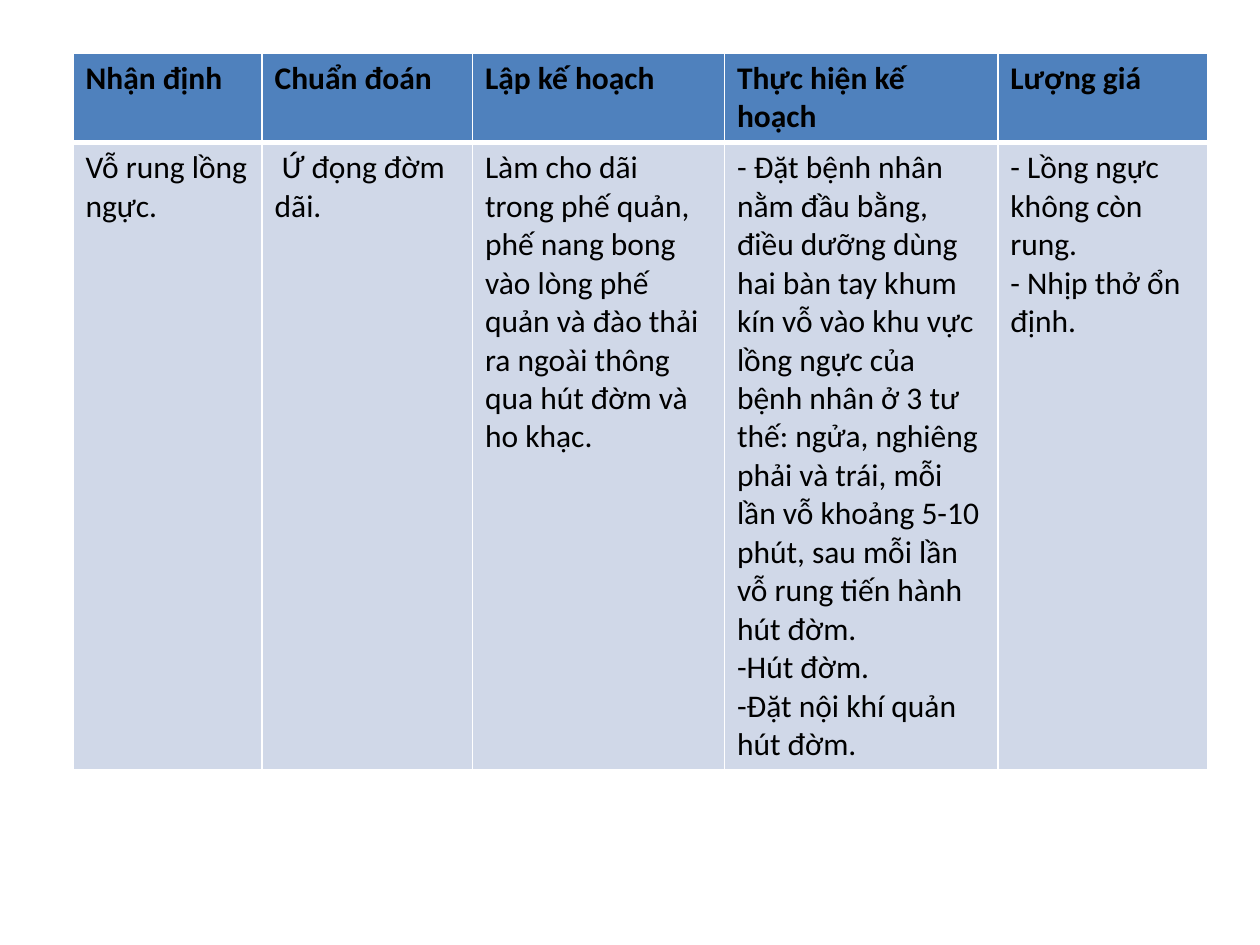
import pptx
import pptx.dml.color
import pptx.oxml
import pptx.oxml.ns
import pptx.util

HEADER_FILL, BODY_FILL, BORDER, TEXT = "4F81BD", "D0D8E8", "FFFFFF", "000000"
THIN, THICK = 1, 3
COLUMN_WIDTHS = [1.5, 1.67, 2, 2.17, 1.67]
ROW_HEIGHTS = [0.67, 4.12]
HEADINGS = ["Nhận định", "Chuẩn đoán", "Lập kế hoạch", "Thực hiện kế hoạch", "Lượng giá"]
CARE_PLAN = [
    "Vỗ rung lồng ngực.",
    " Ứ đọng đờm dãi.",
    "Làm cho dãi trong phế quản, phế nang bong vào lòng phế quản và đào thải "
    "ra ngoài thông qua hút đờm và ho khạc.",
    "- Đặt bệnh nhân nằm đầu bằng, điều dưỡng dùng hai bàn tay khum kín vỗ vào "
    "khu vực lồng ngực của bệnh nhân ở 3 tư thế: ngửa, nghiêng phải và trái, "
    "mỗi lần vỗ khoảng 5-10 phút, sau mỗi lần vỗ rung tiến hành hút đờm.\n"
    "-Hút đờm.\n"
    "-Đặt nội khí quản hút đờm.",
    "- Lồng ngực không còn rung.\n- Nhịp thở ổn định.",
]


def color(value):
    return pptx.dml.color.RGBColor.from_string(value)


def set_borders(cell, widths):
    """Draw the cell's borders; widths maps L, R, T, B, in that order, to points."""
    properties = cell._tc.get_or_add_tcPr()
    for side, width in widths.items():
        properties.append(pptx.oxml.parse_xml(
            f'<a:ln{side} {pptx.oxml.ns.nsdecls("a")} w="{pptx.util.Pt(width)}">'
            f'<a:solidFill><a:srgbClr val="{BORDER}"/></a:solidFill></a:ln{side}>'))


def fill_cell(cell, text, is_header):
    cell.text = text
    font_format = {"name": "Calibri", "size": pptx.util.Pt(18), "bold": is_header}
    for paragraph in cell.text_frame.paragraphs:
        for run in paragraph.runs:
            for name, value in font_format.items():
                setattr(run.font, name, value)
            run.font.color.rgb = color(TEXT)
    top, bottom = (THIN, THICK) if is_header else (THICK, THIN)
    set_borders(cell, {"L": THIN, "R": THIN, "T": top, "B": bottom})
    cell.fill.solid()
    cell.fill.fore_color.rgb = color(HEADER_FILL if is_header else BODY_FILL)


def add_care_table(slide, rows):
    left, top, width, height = map(
        pptx.util.Inches, (0.58, 0.42, sum(COLUMN_WIDTHS), sum(ROW_HEIGHTS)))
    table = slide.shapes.add_table(
        len(rows), len(COLUMN_WIDTHS), left, top, width, height).table
    for column, column_width in zip(table.columns, COLUMN_WIDTHS):
        column.width = pptx.util.Inches(column_width)
    for row_index, (row, row_height) in enumerate(zip(table.rows, ROW_HEIGHTS)):
        row.height = pptx.util.Inches(row_height)
        for cell, text in zip(row.cells, rows[row_index]):
            fill_cell(cell, text, is_header=row_index == 0)


def main():
    presentation = pptx.Presentation()
    presentation.slide_width = pptx.util.Inches(10)
    presentation.slide_height = pptx.util.Inches(7.5)
    slide = presentation.slides.add_slide(presentation.slide_layouts[6])
    add_care_table(slide, [HEADINGS, CARE_PLAN])
    presentation.save("out.pptx")


if __name__ == "__main__":
    main()
